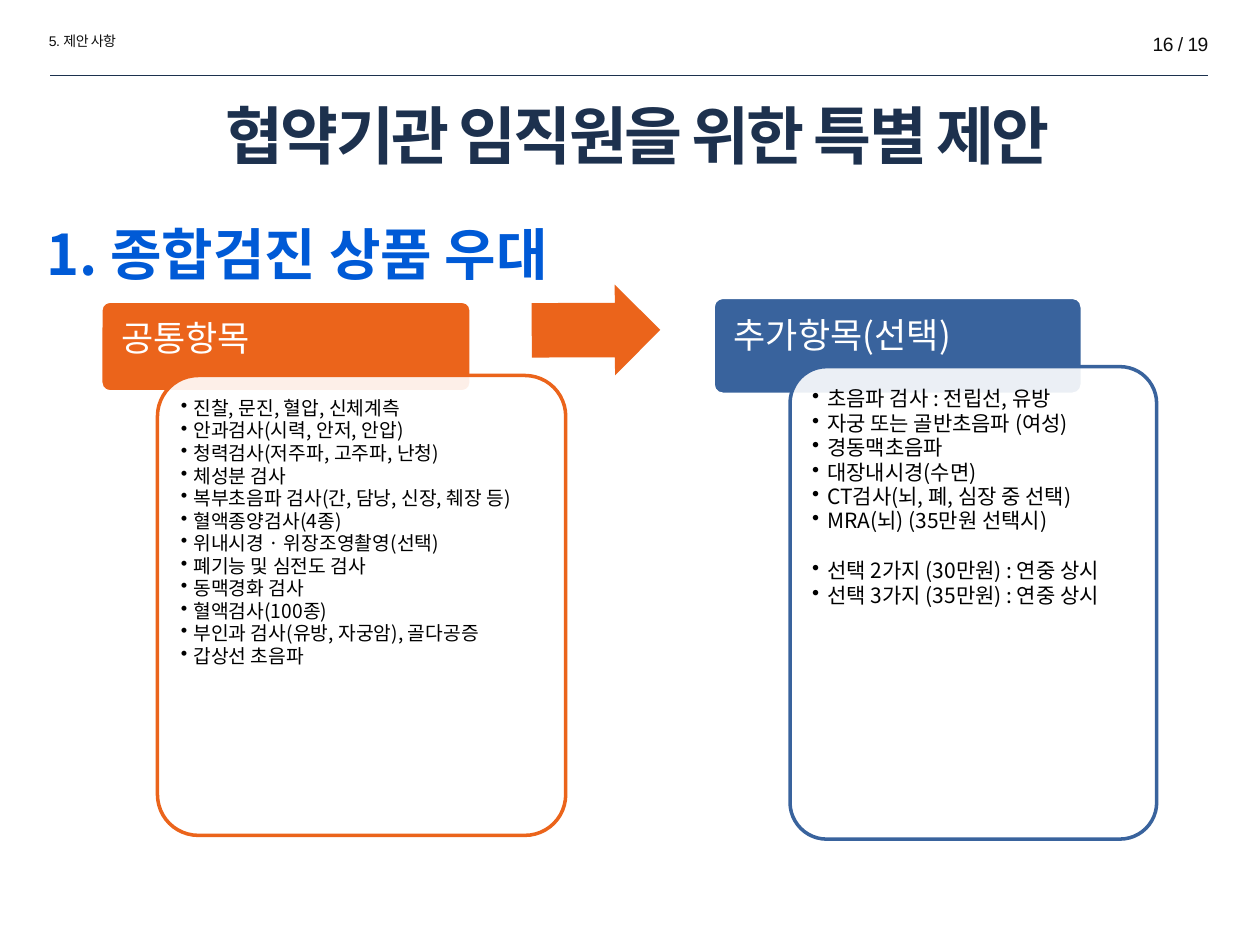
from lxml.etree import SubElement
from pptx import Presentation
from pptx.dml.color import RGBColor
from pptx.enum.shapes import MSO_CONNECTOR, MSO_SHAPE
from pptx.enum.text import MSO_ANCHOR, PP_ALIGN
from pptx.oxml.ns import qn
from pptx.util import Inches, Pt

THEME = {
    "latin": "Arial", "korean": "Noto Sans CJK KR",
    "ink": "0D0D0D", "navy": "1D314E", "rule": "1C314E", "heading": "005AD6",
    "orange": "EB641B", "blue": "39639D", "white": "FFFFFF", "black": "000000",
    "section_size": 8, "page_size": 11, "title_size": 36,
    "heading_size": 32, "tab_size": 20,
}

LABELS = [
    {"text": "5. 제안 사항", "at": (0.29, 0.21, 1.73, 0.24), "size": "section_size",
     "color": "ink", "spacing": -0.3},
    {"text": "16 / 19", "at": (7.96, 0.21, 1.73, 0.29), "size": "page_size",
     "color": "ink", "spacing": -0.3, "align": PP_ALIGN.RIGHT},
    {"text": "협약기관 임직원을 위한 특별 제안", "at": (0.27, 0.6, 9.58, 0.94),
     "size": "title_size", "color": "navy", "spacing": -1.5, "bold": True,
     "align": PP_ALIGN.CENTER, "anchor": MSO_ANCHOR.MIDDLE},
    {"text": "1. 종합검진 상품 우대", "at": (0.27, 1.43, 4.64, 0.91),
     "size": "heading_size", "color": "heading", "font": "korean", "bold": True,
     "line_spacing": 1.5, "wrap": False},
]

PANELS = [
    {"title": "공통항목", "color": "orange", "size": 11, "hang": 0.1,
     "tab": (0.8, 2.39, 2.94, 0.72), "body": (1.25, 2.98, 3.24, 3.65),
     "groups": [[
         "진찰, 문진, 혈압, 신체계측", "안과검사(시력, 안저, 안압)",
         "청력검사(저주파, 고주파, 난청)", "체성분 검사",
         "복부초음파 검사(간, 담낭, 신장, 췌장 등)", "혈액종양검사(4종)",
         "위내시경 · 위장조영촬영(선택)", "폐기능 및 심전도 검사", "동맥경화 검사",
         "혈액검사(100종)", "부인과 검사(유방, 자궁암), 골다공증", "갑상선 초음파"]]},
    {"title": "추가항목(선택)", "color": "blue", "size": 12, "hang": 0.12,
     "tab": (5.66, 2.36, 2.93, 0.77), "body": (6.27, 2.91, 2.91, 3.75),
     "groups": [
         ["초음파 검사 : 전립선, 유방", "자궁 또는 골반초음파 (여성)", "경동맥초음파",
          "대장내시경(수면)", "CT검사(뇌, 폐, 심장 중 선택)", "MRA(뇌) (35만원 선택시)"],
         ["선택 2가지 (30만원) : 연중 상시", "선택 3가지 (35만원) : 연중 상시"]]},
]

ARROW = (4.22, 2.26, 1.02, 0.72)
GROUP_GAP = 14.5


def rgb(name):
    """Return a theme colour."""
    return RGBColor.from_string(THEME[name])


def add_run(paragraph, text, size, color, font="korean", bold=False, spacing=0):
    """Append one styled run to a paragraph."""
    run = paragraph.add_run()
    run.text = text
    run.font.size, run.font.bold = Pt(size), bold
    run.font.name = THEME[font]
    run.font.color.rgb = rgb(color)
    properties = run.font._element
    SubElement(properties, qn("a:ea")).set("typeface", THEME["korean"])
    if spacing:
        properties.set("spc", str(round(spacing * 100)))


def add_label(slide, label):
    """Add a free-standing line of text."""
    box = slide.shapes.add_textbox(*map(Inches, label["at"]))
    frame = box.text_frame
    frame.word_wrap = label.get("wrap", True)
    frame.vertical_anchor = label.get("anchor", MSO_ANCHOR.TOP)
    paragraph = frame.paragraphs[0]
    paragraph.alignment = label.get("align", PP_ALIGN.LEFT)
    paragraph.line_spacing = label.get("line_spacing", 1.0)
    add_run(paragraph, label["text"], THEME[label["size"]], label["color"],
            label.get("font", "latin"), label.get("bold", False), label.get("spacing", 0))


def add_block(slide, kind, at, adjustments, fill, line=None):
    """Add a filled preset shape with an optional outline."""
    block = slide.shapes.add_shape(kind, *map(Inches, at))
    block.shadow.inherit = False
    for index, value in enumerate(adjustments):
        block.adjustments[index] = value
    block.fill.solid()
    block.fill.fore_color.rgb = rgb(fill)
    if line:
        block.line.color.rgb = rgb(line)
        block.line.width = Pt(2)
    else:
        block.line.fill.background()
    return block


def prepare_frame(block, left, top):
    """Set a top-anchored wrapping text frame and return it."""
    frame = block.text_frame
    frame.word_wrap = True
    frame.vertical_anchor = MSO_ANCHOR.TOP
    frame.margin_left = frame.margin_right = Inches(left)
    frame.margin_top = frame.margin_bottom = Inches(top)
    return frame


def add_bullet(paragraph, hang):
    """Give a paragraph a hanging bullet."""
    properties = paragraph._p.get_or_add_pPr()
    properties.set("marL", str(Inches(hang)))
    properties.set("indent", str(-Inches(hang)))
    SubElement(properties, qn("a:buChar")).set("char", "•")


def add_panel(slide, panel):
    """Add a coloured tab and the bulleted card that overlaps it."""
    tab = add_block(slide, MSO_SHAPE.ROUNDED_RECTANGLE, panel["tab"], [0.1],
                    panel["color"], "white")
    heading = prepare_frame(tab, 0.14, 0.14).paragraphs[0]
    heading.alignment, heading.line_spacing = PP_ALIGN.LEFT, 0.9
    add_run(heading, panel["title"], THEME["tab_size"], "white")

    card = add_block(slide, MSO_SHAPE.ROUNDED_RECTANGLE, panel["body"], [0.1],
                     "white", panel["color"])
    color = card.fill._xPr.find(qn("a:solidFill")).find(qn("a:srgbClr"))
    SubElement(color, qn("a:alpha")).set("val", "90000")
    frame = prepare_frame(card, 0.09, 0.09)
    for group_index, group in enumerate(panel["groups"]):
        for item_index, item in enumerate(group):
            first = group_index == item_index == 0
            paragraph = frame.paragraphs[0] if first else frame.add_paragraph()
            paragraph.level, paragraph.alignment = 1, PP_ALIGN.LEFT
            paragraph.line_spacing, paragraph.space_after = 0.9, Pt(1)
            if group_index and not item_index:
                paragraph.space_before = Pt(GROUP_GAP)
            add_bullet(paragraph, panel["hang"])
            add_run(paragraph, item, panel["size"], "black")


def main():
    """Build the special offer slide."""
    deck = Presentation()
    deck.slide_width, deck.slide_height = Inches(10), Inches(7.5)
    slide = deck.slides.add_slide(deck.slide_layouts[6])
    rule = slide.shapes.add_connector(
        MSO_CONNECTOR.STRAIGHT, *map(Inches, (0.4, 0.6, 9.59, 0.6)))
    rule.line.color.rgb = rgb("rule")
    rule.line.width = Pt(0.25)
    SubElement(rule._element.spPr, qn("a:effectLst"))
    for label in LABELS:
        add_label(slide, label)
    for panel in PANELS:
        add_panel(slide, panel)
    arrow = add_block(slide, MSO_SHAPE.RIGHT_ARROW, ARROW, [0.6, 0.5], "orange")
    arrow.rotation = 359.8
    deck.save("out.pptx")


if __name__ == "__main__":
    main()
